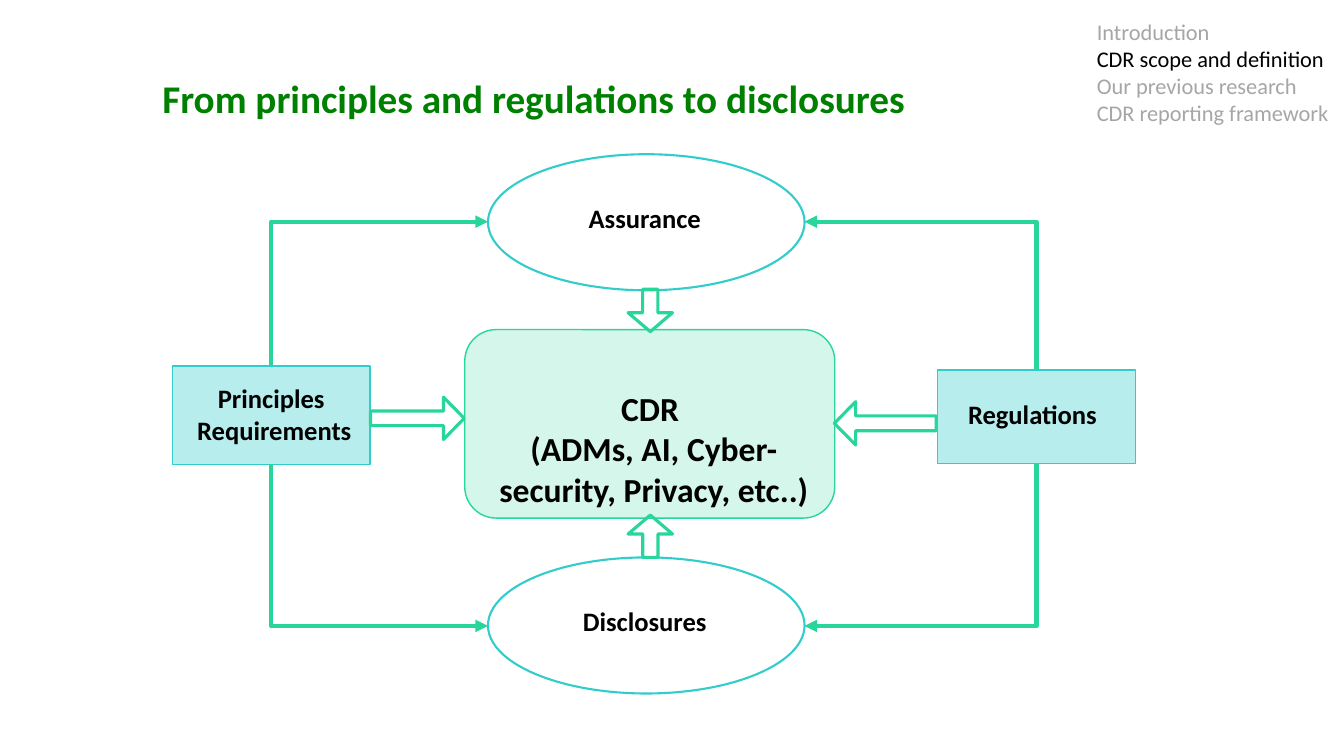
from lxml import etree
from pptx import Presentation
from pptx.dml.color import RGBColor
from pptx.enum.shapes import MSO_CONNECTOR, MSO_SHAPE
from pptx.enum.text import MSO_ANCHOR, MSO_AUTO_SIZE, PP_ALIGN
from pptx.oxml.ns import qn
from pptx.util import Inches, Pt

RECT, ROUNDED = MSO_SHAPE.RECTANGLE, MSO_SHAPE.ROUNDED_RECTANGLE
OVAL, DOWN_ARROW = MSO_SHAPE.OVAL, MSO_SHAPE.DOWN_ARROW
ELBOW = MSO_CONNECTOR.ELBOW
LEFT, CENTER = PP_ALIGN.LEFT, PP_ALIGN.CENTER
MIDDLE, NO_FIT = MSO_ANCHOR.MIDDLE, MSO_AUTO_SIZE.NONE

COLORS = {"teal": "33CCCC", "green": "28D69C", "title": "008000",
          "text": "000000", "muted": "A6A6A6"}


def rgb(name):
    return RGBColor.from_string(COLORS[name])


class Diagram:
    font = "Calibri"

    def __init__(self, prs):
        self.slide = prs.slides.add_slide(prs.slide_layouts[5])
        self.shapes = self.slide.shapes

    def run(self, p, text, size, color, bold):
        r = p.add_run()
        r.text = text
        r.font.name, r.font.size, r.font.bold = self.font, Pt(size), bold
        r.font.color.rgb = rgb(color)

    def title(self, text, box):
        s = self.shapes.title
        s.left, s.top, s.width, s.height = map(Inches, box)
        tf = s.text_frame
        tf.auto_size, tf.vertical_anchor = NO_FIT, MIDDLE
        tf.paragraphs[0].alignment = LEFT
        self.run(tf.paragraphs[0], text, 28, "title", True)

    def text(self, lines, box, size=19, align=CENTER, bold=True):
        """Add a text box with one paragraph per (text, colour) pair."""
        tf = self.shapes.add_textbox(*map(Inches, box)).text_frame
        tf.word_wrap = True
        for i, (line, color) in enumerate(lines):
            p = tf.add_paragraph() if i else tf.paragraphs[0]
            p.alignment = align
            self.run(p, line, size, color, bold)

    def shape(self, kind, box, color, weight, opacity=0):
        """Add an outlined shape, tinted when opacity (percent) is given."""
        s = self.shapes.add_shape(kind, *map(Inches, box))
        s.shadow.inherit = False
        s.line.color.rgb, s.line.width = rgb(color), Pt(weight)
        if opacity:
            s.fill.solid()
            s.fill.fore_color.rgb = rgb(color)
            clr = s._element.spPr.find(qn("a:solidFill"))[0]
            etree.SubElement(clr, qn("a:alpha"), val=str(opacity * 1000))
        else:
            s.fill.background()
        return s

    def block_arrow(self, cx, cy, width, length, rotation, head):
        """Add a down arrow centred on (cx, cy), then turn it."""
        box = (cx - width / 2, cy - length / 2, width, length)
        s = self.shape(DOWN_ARROW, box, "green", 2.25)
        s.rotation = rotation
        s.adjustments[0], s.adjustments[1] = 0.344, head

    def elbow(self, tip, tail):
        """Run level from the arrowhead at tip, then upright to tail."""
        c = self.shapes.add_connector(ELBOW, *map(Inches, tip + tail))
        c.line.color.rgb, c.line.width = rgb("green"), Pt(3)
        sp_pr = c._element.spPr
        sp_pr.find(qn("a:prstGeom")).set("prst", "bentConnector2")
        etree.SubElement(sp_pr.find(qn("a:ln")), qn("a:headEnd"), type="triangle")
        etree.SubElement(sp_pr, qn("a:effectLst"))


def main():
    prs = Presentation()
    prs.slide_width, prs.slide_height = Inches(13.33), Inches(7.5)
    d = Diagram(prs)
    d.title("From principles and regulations to disclosures", (1.51, 0.45, 9.2, 1.04))

    d.shape(RECT, (9.3, 3.67, 1.96, 0.93), "teal", 1, 35)
    d.shape(RECT, (1.71, 3.63, 1.96, 0.98), "teal", 1, 35)
    d.shape(ROUNDED, (4.61, 3.27, 3.67, 1.87), "green", 1, 20)

    d.text([("Principles ", "text"), ("Requirements", "text")], (1.82, 3.74, 1.8, 0.74))
    d.text([("Regulations", "text")], (9.26, 3.9, 1.96, 0.42))
    d.text([("CDR ", "text"), ("(ADMs, AI, Cyber-security, Privacy, etc..)", "text")],
           (4.69, 3.8, 3.59, 1.32), size=24)

    oval_left, oval_w, oval_h = 4.84, 3.14, 1.35
    for name, top in (("Assurance", 1.53), ("Disclosures", 5.53)):
        d.shape(OVAL, (oval_left, top, oval_w, oval_h), "teal", 1.5)
        d.text([(name, "text")], (5.21, top + 0.42, 2.37, 0.42))

    for cx, cy, width, length, rotation, head in (
            (4.14, 4.15, 0.42, 0.93, 270, 0.491),
            (8.78, 4.2, 0.43, 1.01, 90, 0.491),
            (6.45, 3.08, 0.44, 0.42, 0, 0.447),
            (6.45, 5.32, 0.44, 0.42, 180, 0.447)):
        d.block_arrow(cx, cy, width, length, rotation, head)

    for tip_x, box_x, box_top in ((oval_left, 2.69, 3.63),
                                  (oval_left + oval_w, 10.28, 3.67)):
        for tip_y, box_y in ((2.2, box_top), (6.21, 4.6)):
            d.elbow((tip_x, tip_y), (box_x, box_y))

    d.text([("Introduction", "muted"), ("CDR scope and definition", "text"),
            ("Our previous research", "muted"), ("CDR reporting framework", "muted")],
           (10.78, 0.13, 2.55, 1.18), size=16, align=LEFT, bold=False)
    prs.save("out.pptx")


if __name__ == "__main__":
    main()
